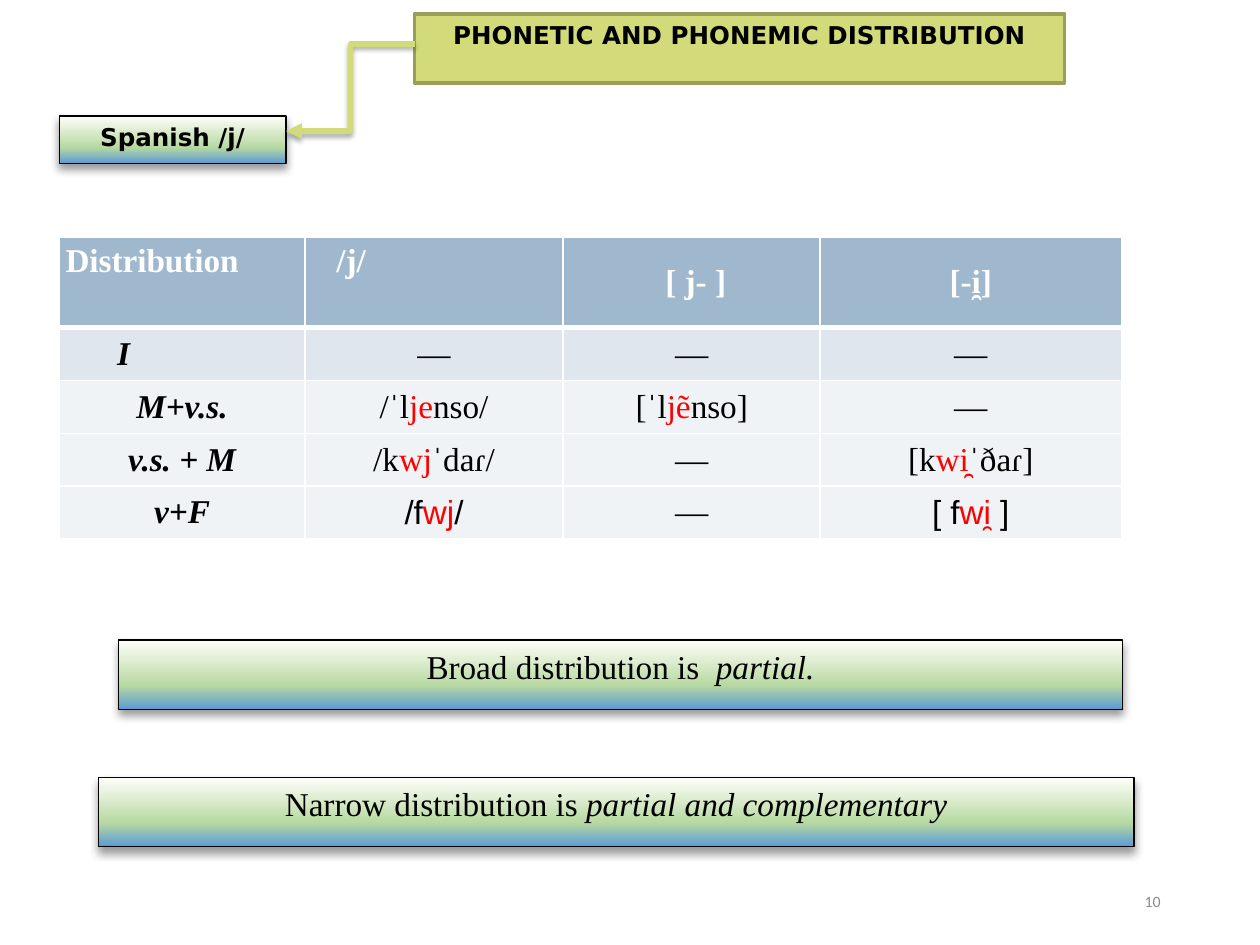
from dataclasses import dataclass

from lxml.etree import SubElement
from pptx import Presentation
from pptx.dml.color import RGBColor
from pptx.enum.shapes import MSO_CONNECTOR, MSO_SHAPE
from pptx.enum.text import MSO_ANCHOR, MSO_AUTO_SIZE, PP_ALIGN
from pptx.oxml.ns import qn
from pptx.util import Inches, Pt

BLACK = RGBColor(0x00, 0x00, 0x00)
WHITE = RGBColor(0xFF, 0xFF, 0xFF)
RED = RGBColor(0xFF, 0x00, 0x00)
GRAY = RGBColor(0x8C, 0x8C, 0x8C)
LIME = RGBColor(0xD2, 0xDA, 0x7A)
OLIVE = RGBColor(0x99, 0x9F, 0x59)
HEADER_BLUE = RGBColor(0x9F, 0xB8, 0xCD)
BAND_DARK = RGBColor(0xDF, 0xE6, 0xED)
BAND_LIGHT = RGBColor(0xEF, 0xF3, 0xF6)
GRADIENT = (
    (0, RGBColor(0x5B, 0x9B, 0xD5)),
    (35, RGBColor(0xB8, 0xD9, 0xA2)),
    (100, RGBColor(0xFF, 0xFE, 0xF9)),
)
SERIF, SANS, HEADING = "Times New Roman", "Arial", "DejaVu Sans"
INSET = 0.05


@dataclass(frozen=True)
class Run:
    text: str
    color: RGBColor | None = None
    italic: bool | None = None


@dataclass(frozen=True)
class Box:
    left: float
    top: float
    width: float
    height: float
    runs: tuple[Run, ...]
    font: str = SERIF
    size: float = 19
    bold: bool = False


@dataclass(frozen=True)
class Cell:
    runs: tuple[Run, ...]
    font: str = SERIF
    bold: bool = False
    italic: bool = False
    indent: float | None = None  # left-aligned at this margin when given
    anchor: MSO_ANCHOR = MSO_ANCHOR.MIDDLE


def sound(before: str, accent: str, after: str, font: str = SERIF) -> Cell:
    """Transcription whose middle part is red."""
    return Cell((Run(before), Run(accent, RED), Run(after)), font)


def header(text: str, **options) -> Cell:
    return Cell((Run(text, WHITE),), bold=True, **options)


def label(text: str, **options) -> Cell:
    return Cell((Run(text),), bold=True, italic=True, **options)


DASH = Cell((Run("—"),))
COLUMN_WIDTHS = (1.95, 2.05, 2.04, 2.39)
ROW_HEIGHTS = (0.72, 0.42, 0.42, 0.42, 0.42)
ROW_FILLS = (HEADER_BLUE, BAND_DARK, BAND_LIGHT, BAND_LIGHT, BAND_LIGHT)
ROWS = (
    (header("Distribution", indent=INSET, anchor=MSO_ANCHOR.TOP),
     header("/j/", indent=0.25, anchor=MSO_ANCHOR.TOP),
     header(" [ j- ]"), header("[-i̯]")),
    (label("I", indent=0.46), DASH, DASH, DASH),
    (label("M+v.s."), sound("/ˈl", "je", "nso/"), sound("[ˈl", "jẽ", "nso]"), DASH),
    (label("v.s. + M"), sound("/k", "wj", "ˈdaɾ/"), DASH, sound("[k", "wi̯", "ˈðaɾ]")),
    (label("v+F"), sound("/f", "wj", "/", SANS), DASH, sound("[ f", "wi̯", " ]", SANS)),
)
TITLE = Box(3.29, 0.11, 5.16, 0.55, (Run("PHONETIC AND PHONEMIC DISTRIBUTION"),),
            HEADING, 14, True)
BOXES = (
    Box(0.47, 0.92, 1.8, 0.38, (Run("Spanish /j/"),), HEADING, 14, True),
    Box(0.94, 5.08, 7.97, 0.55,
        (Run("Broad distribution is  "), Run("partial.", italic=True))),
    Box(0.78, 6.17, 8.22, 0.55,
        (Run("Narrow distribution is "), Run("partial and complementary", italic=True))),
)


def write_text(frame, runs, *, font=SERIF, size=19, color=BLACK, bold=False,
               italic=False, align=PP_ALIGN.CENTER, anchor=MSO_ANCHOR.TOP) -> None:
    frame.word_wrap = True
    frame.vertical_anchor = anchor
    paragraph = frame.paragraphs[0]
    paragraph.alignment = align
    for part in runs:
        run = paragraph.add_run()
        run.text = part.text
        run.font.name = font
        run.font.size = Pt(size)
        run.font.bold = bold
        run.font.italic = italic if part.italic is None else part.italic
        run.font.color.rgb = part.color or color


def set_insets(target, left: float = INSET) -> None:
    target.margin_left = Inches(left)
    target.margin_right = target.margin_top = target.margin_bottom = Inches(INSET)


def add_shadow(shape, blur: float, distance: float, opacity: int) -> None:
    """Soft black shadow falling straight down."""
    effects = SubElement(shape._element.spPr, qn("a:effectLst"))
    shadow = SubElement(effects, qn("a:outerShdw"), blurRad=str(Pt(blur)),
                        dist=str(Pt(distance)), dir="5400000", rotWithShape="0")
    color = SubElement(shadow, qn("a:srgbClr"), val=str(BLACK))
    SubElement(color, qn("a:alpha"), val=str(opacity * 1000))


def fill_gradient(shape) -> None:
    shape.fill.gradient()
    shape.fill.gradient_angle = 90
    stops = shape._element.spPr.find(".//" + qn("a:gsLst"))
    for stop in list(stops):
        stops.remove(stop)
    for position, color in GRADIENT:
        stop = SubElement(stops, qn("a:gs"), pos=str(position * 1000))
        SubElement(stop, qn("a:srgbClr"), val=str(color))


def fill_box(shape, box: Box) -> None:
    frame = shape.text_frame
    frame.auto_size = MSO_AUTO_SIZE.NONE
    set_insets(frame)
    write_text(frame, box.runs, font=box.font, size=box.size, bold=box.bold)


def add_title(slide, box: Box) -> None:
    title = slide.shapes.title
    title.left, title.top = Inches(box.left), Inches(box.top)
    title.width, title.height = Inches(box.width), Inches(box.height)
    title.fill.solid()
    title.fill.fore_color.rgb = LIME
    title.line.color.rgb = OLIVE
    title.line.width = Pt(2)
    fill_box(title, box)


def add_box(slide, box: Box) -> None:
    shape = slide.shapes.add_shape(MSO_SHAPE.RECTANGLE, Inches(box.left), Inches(box.top),
                                   Inches(box.width), Inches(box.height))
    fill_gradient(shape)
    shape.line.color.rgb = BLACK
    shape.line.width = Pt(0.75)
    add_shadow(shape, 5, 3, 40)
    fill_box(shape, box)


def add_arrow(slide) -> None:
    arrow = slide.shapes.add_connector(MSO_CONNECTOR.ELBOW, Inches(3.29), Inches(0.35),
                                       Inches(2.27), Inches(1.04))
    arrow.line.color.rgb = LIME
    arrow.line.width = Pt(3)
    SubElement(arrow.line._get_or_add_ln(), qn("a:tailEnd"), type="triangle")
    add_shadow(arrow, 3, 1.8, 35)


def set_borders(table_cell, row: int) -> None:
    """White grid, with a thick rule below the header row."""
    properties = table_cell._tc.get_or_add_tcPr()
    widths = {"L": 1, "R": 1, "T": 3 if row == 1 else 1, "B": 3 if row == 0 else 1}
    for side, width in widths.items():
        line = SubElement(properties, qn(f"a:ln{side}"), w=str(Pt(width)))
        fill = SubElement(line, qn("a:solidFill"))
        SubElement(fill, qn("a:srgbClr"), val=str(WHITE))


def add_distribution_table(slide) -> None:
    table = slide.shapes.add_table(
        len(ROWS), len(COLUMN_WIDTHS), Inches(0.47), Inches(1.88),
        Inches(sum(COLUMN_WIDTHS)), Inches(sum(ROW_HEIGHTS))).table
    for column, width in zip(table.columns, COLUMN_WIDTHS):
        column.width = Inches(width)
    for row_index, (cells, height, color) in enumerate(zip(ROWS, ROW_HEIGHTS, ROW_FILLS)):
        table.rows[row_index].height = Inches(height)
        for column_index, cell in enumerate(cells):
            table_cell = table.cell(row_index, column_index)
            set_borders(table_cell, row_index)
            table_cell.fill.solid()
            table_cell.fill.fore_color.rgb = color
            indented = cell.indent is not None
            set_insets(table_cell, cell.indent if indented else INSET)
            write_text(table_cell.text_frame, cell.runs, font=cell.font, bold=cell.bold,
                       italic=cell.italic,
                       align=PP_ALIGN.LEFT if indented else PP_ALIGN.CENTER)
            table_cell.vertical_anchor = cell.anchor


def main() -> None:
    presentation = Presentation()
    presentation.slide_width, presentation.slide_height = Inches(10), Inches(7.5)
    slide = presentation.slides.add_slide(presentation.slide_layouts[5])
    add_title(slide, TITLE)
    add_distribution_table(slide)
    for box in BOXES:
        add_box(slide, box)
    add_arrow(slide)
    number = slide.shapes.add_textbox(Inches(7.06), Inches(6.95), Inches(2.25), Inches(0.4))
    write_text(number.text_frame, (Run("10"),), font="Calibri", size=9, color=GRAY,
               align=PP_ALIGN.RIGHT, anchor=MSO_ANCHOR.MIDDLE)
    presentation.save("out.pptx")


if __name__ == "__main__":
    main()
